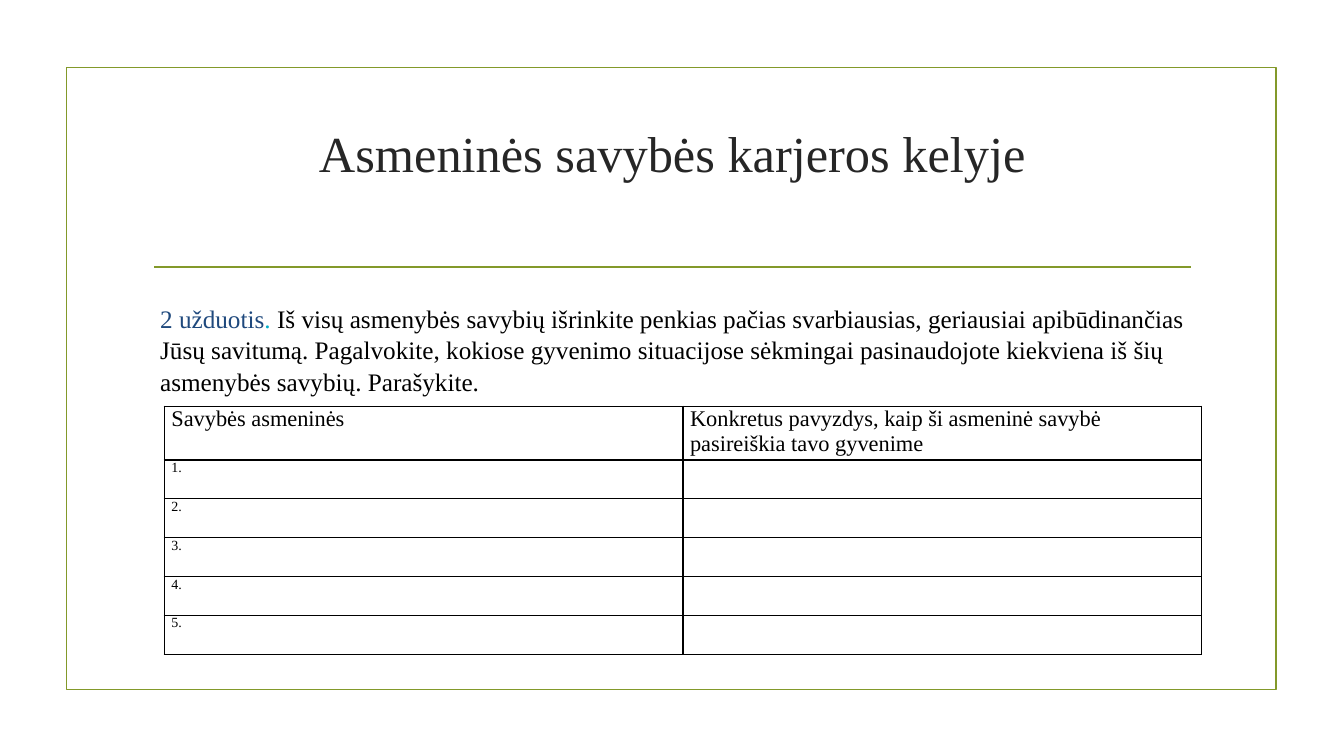
import pptx
import pptx.dml.color
import pptx.enum.shapes
import pptx.enum.text
import pptx.oxml
import pptx.oxml.ns
import pptx.util
from lxml import etree

Inches = pptx.util.Inches
Pt = pptx.util.Pt
FONT = "Times New Roman"
GREEN = "83992A"
BLACK = "000000"


def rgb(value):
    return pptx.dml.color.RGBColor.from_string(value)


def add_run(p, text, size, color):
    r = p.add_run()
    r.text = text
    r.font.name = FONT
    r.font.size = Pt(size)
    r.font.color.rgb = rgb(color)


def add_text_box(s, left, top, width, height, anchor):
    sp = s.shapes.add_textbox(Inches(left), Inches(top), Inches(width), Inches(height))
    tf = sp.text_frame
    tf.word_wrap = True
    tf.vertical_anchor = anchor
    return tf.paragraphs[0]


def add_frame(s, left, top, width, height):
    # Border around the page
    sp = s.shapes.add_shape(pptx.enum.shapes.MSO_SHAPE.RECTANGLE, Inches(left),
                            Inches(top), Inches(width), Inches(height))
    sp.shadow.inherit = False
    sp.fill.background()
    sp.line.color.rgb = rgb(GREEN)
    sp.line.width = Pt(1.25)

    # Rule under the title
    y = Inches(top + 1.98)
    rule = s.shapes.add_connector(pptx.enum.shapes.MSO_CONNECTOR.STRAIGHT,
                                  Inches(left + 0.87), y, Inches(left + width - 0.85), y)
    rule.line.color.rgb = rgb(GREEN)
    rule.line.width = Pt(1.25)
    etree.SubElement(rule._element.spPr, pptx.oxml.ns.qn("a:effectLst"))


def add_title(s, left, top, width, height):
    p = add_text_box(s, left, top, width, height, pptx.enum.text.MSO_ANCHOR.MIDDLE)
    p.alignment = pptx.enum.text.PP_ALIGN.CENTER
    add_run(p, "Asmeninės savybės karjeros kelyje", 36, "262626")


def add_task(s, left, top, width, height):
    p = add_text_box(s, left, top, width, height, pptx.enum.text.MSO_ANCHOR.TOP)
    p.line_spacing = 1.05
    add_run(p, "2 užduotis", 18, "1F497D")
    add_run(p, ". ", 18, "00AEC9")
    add_run(p, "Iš visų asmenybės savybių išrinkite penkias pačias svarbiausias, "
               "geriausiai apibūdinančias Jūsų savitumą. Pagalvokite, kokiose gyvenimo "
               "situacijose sėkmingai pasinaudojote kiekviena iš šių asmenybės savybių. "
               "Parašykite.", 18, BLACK)


def set_borders(cell, color, width):
    tcPr = cell._tc.get_or_add_tcPr()
    for i, side in enumerate(("lnL", "lnR", "lnT", "lnB")):
        tcPr.insert(i, pptx.oxml.parse_xml(
            f'<a:{side} {pptx.oxml.ns.nsdecls("a")} w="{Pt(width)}"><a:solidFill>'
            f'<a:srgbClr val="{color}"/></a:solidFill></a:{side}>'))


def add_traits_table(s, left, top, width, height):
    header_height = 0.53
    rows = [("Savybės asmeninės",
             "Konkretus pavyzdys, kaip ši asmeninė savybė pasireiškia tavo gyvenime")]
    rows += [(f"{n}.", "") for n in range(1, 6)]
    table = s.shapes.add_table(len(rows), 2, Inches(left), Inches(top),
                               Inches(width), Inches(height)).table
    table.first_row = False
    table.horz_banding = False
    for i, texts in enumerate(rows):
        table.rows[i].height = Inches(
            (height - header_height) / (len(rows) - 1) if i else header_height)
        for j, text in enumerate(texts):
            cell = table.cell(i, j)
            cell.fill.background()
            cell.margin_left = cell.margin_right = Inches(0.07)
            cell.margin_top = cell.margin_bottom = 0
            set_borders(cell, BLACK, 1)
            if text:
                add_run(cell.text_frame.paragraphs[0], text, 10 if i else 16, BLACK)


def main():
    prs = pptx.Presentation()
    prs.slide_width = Inches(13.33)
    prs.slide_height = Inches(7.5)
    s = prs.slides.add_slide(prs.slide_layouts[6])
    add_frame(s, 0.66, 0.67, 12, 6.17)
    add_title(s, 1.42, 1.07, 10.5, 0.88)
    add_task(s, 1.49, 2.94, 10.5, 1.31)
    add_traits_table(s, 1.63, 4.03, 10.29, 2.46)
    prs.save("out.pptx")


if __name__ == "__main__":
    main()
